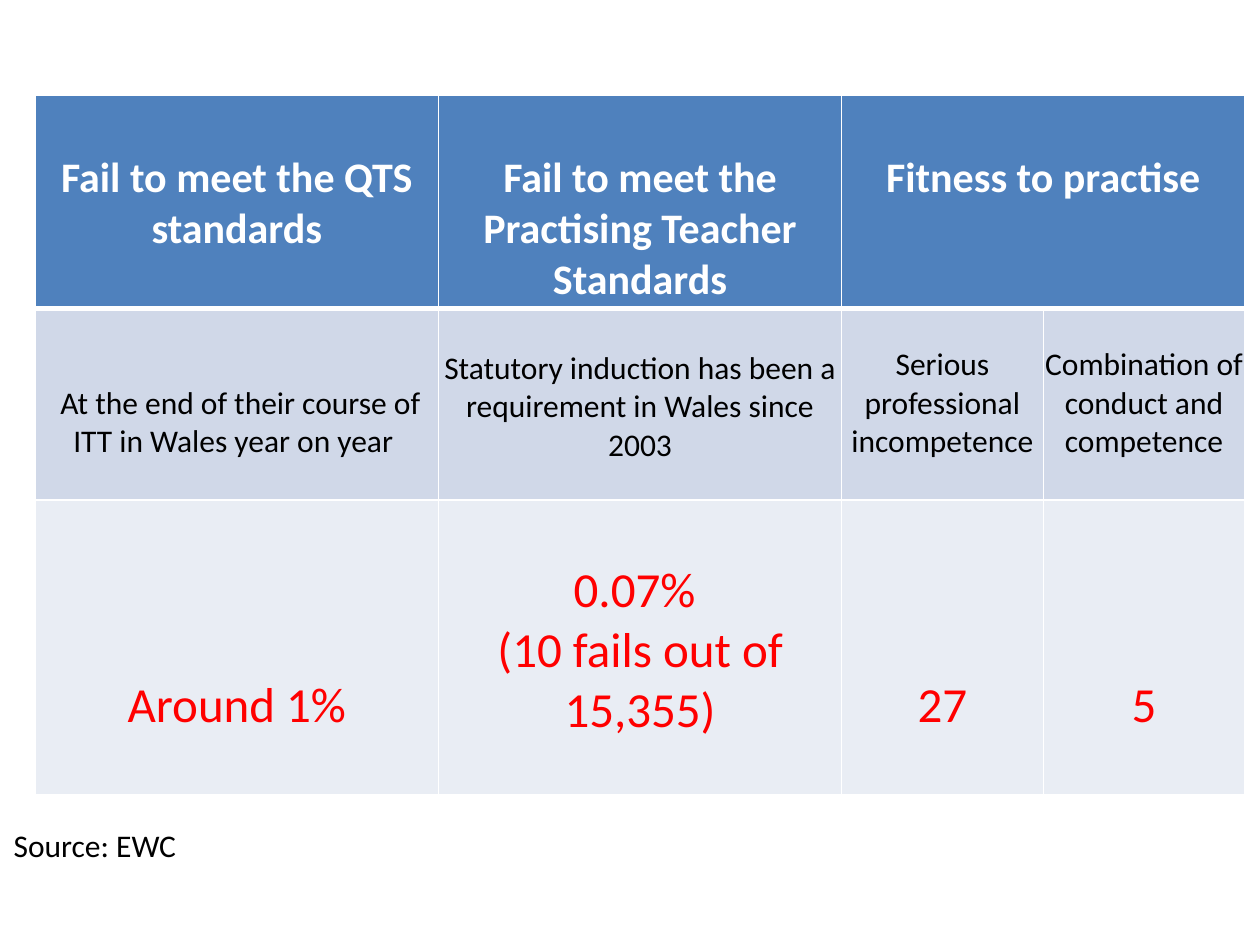
from dataclasses import dataclass

from lxml import etree
from pptx import Presentation
from pptx import util as u
from pptx.dml.color import RGBColor
from pptx.enum import text
from pptx.oxml import ns

WHITE = RGBColor(0xFF, 0xFF, 0xFF)
BLACK = RGBColor(0, 0, 0)
RED = RGBColor(0xFF, 0, 0)
HEADER_BLUE = RGBColor(0x4F, 0x81, 0xBD)
BAND_BLUE = RGBColor(0xD0, 0xD8, 0xE8)
PALE_BLUE = RGBColor(0xE9, 0xED, 0xF4)


@dataclass
class RowStyle:
    """Look of the cells in one table row."""
    height: float
    fill: RGBColor
    size: int
    color: RGBColor
    bold: bool
    anchor: text.MSO_ANCHOR
    side: float
    top: float
    bottoms: tuple
    rule: int


class SlideBuilder:
    """Holds the text style and the current slide."""

    def __init__(self, slide, font="Calibri"):
        self.slide = slide
        self.font = font

    def add_lines(self, frame, lines, size, color, bold=False, align=text.PP_ALIGN.LEFT):
        for index, line in enumerate(lines):
            paragraph = frame.add_paragraph() if index else frame.paragraphs[0]
            paragraph.alignment = align
            run = paragraph.add_run()
            run.text = line
            run.font.name = self.font
            run.font.size = u.Pt(size)
            run.font.bold = bold
            run.font.color.rgb = color

    def borders(self, cell, top, bottom):
        properties = cell._tc.get_or_add_tcPr()
        widths = {"a:lnL": 1, "a:lnR": 1, "a:lnT": top, "a:lnB": bottom}
        for index, (tag, width) in enumerate(widths.items()):
            line = etree.Element(ns.qn(tag), w=str(u.Pt(width)))
            fill = etree.SubElement(line, ns.qn("a:solidFill"))
            etree.SubElement(fill, ns.qn("a:srgbClr"), val=str(WHITE))
            properties.insert(index, line)

    def table(self, left, top, widths, styles, rows):
        heights = [style.height for style in styles]
        frame = self.slide.shapes.add_table(
            len(rows), len(widths), u.Inches(left), u.Inches(top),
            u.Inches(sum(widths)), u.Inches(sum(heights)))
        table = frame.table
        for column, width in zip(table.columns, widths):
            column.width = u.Inches(width)
        rule_above = 1
        for row_index, (style, row) in enumerate(zip(styles, rows)):
            table.rows[row_index].height = u.Inches(style.height)
            for column_index, lines in enumerate(row):
                cell = table.cell(row_index, column_index)
                cell.fill.solid()
                cell.fill.fore_color.rgb = style.fill
                cell.vertical_anchor = style.anchor
                cell.margin_left = cell.margin_right = u.Inches(style.side)
                cell.margin_top = u.Inches(style.top)
                cell.margin_bottom = u.Inches(style.bottoms[column_index])
                self.borders(cell, rule_above, style.rule)
                self.add_lines(cell.text_frame, lines, style.size, style.color,
                               style.bold, text.PP_ALIGN.CENTER)
            rule_above = style.rule
        return table

    def text_box(self, left, top, width, height, line, size, color):
        shape = self.slide.shapes.add_textbox(*map(u.Inches, (left, top, width, height)))
        shape.text_frame.word_wrap = True
        shape.text_frame.auto_size = text.MSO_AUTO_SIZE.SHAPE_TO_FIT_TEXT
        self.add_lines(shape.text_frame, [line], size, color)


def main():
    presentation = Presentation()
    presentation.slide_width = u.Inches(10)
    presentation.slide_height = u.Inches(7.5)
    builder = SlideBuilder(presentation.slides.add_slide(presentation.slide_layouts[6]))

    bottom = text.MSO_ANCHOR.BOTTOM
    styles = [
        RowStyle(1.69, HEADER_BLUE, 24, WHITE, True, text.MSO_ANCHOR.TOP,
                 0.1, 0.45, (0, 0, 0, 0), 3),
        RowStyle(1.52, BAND_BLUE, 18, BLACK, False, bottom,
                 0.01, 0.01, (0.31, 0.28, 0.31, 0.31), 1),
        RowStyle(2.34, PALE_BLUE, 28, RED, False, bottom,
                 0.01, 0.01, (0.47, 0.43, 0.47, 0.47), 1),
    ]
    rows = [
        [["Fail to meet the QTS standards"],
         ["Fail to meet the Practising Teacher Standards"],
         ["Fitness to practise"], []],
        [[" At the end of their course of ITT in Wales year on year "],
         ["Statutory induction has been a requirement in Wales since 2003"],
         ["Serious professional incompetence"],
         ["Combination of conduct and competence"]],
        [["Around 1%"], ["0.07% ", "(10 fails out of 15,355)"], ["27"], ["5"]],
    ]
    table = builder.table(0.28, 0.76, [3.2, 3.2, 1.6, 1.6], styles, rows)
    table.cell(0, 2).merge(table.cell(0, 3))
    builder.text_box(0.01, 6.51, 3.07, 0.4, "Source: EWC", 18, BLACK)
    presentation.save("out.pptx")


if __name__ == "__main__":
    main()
